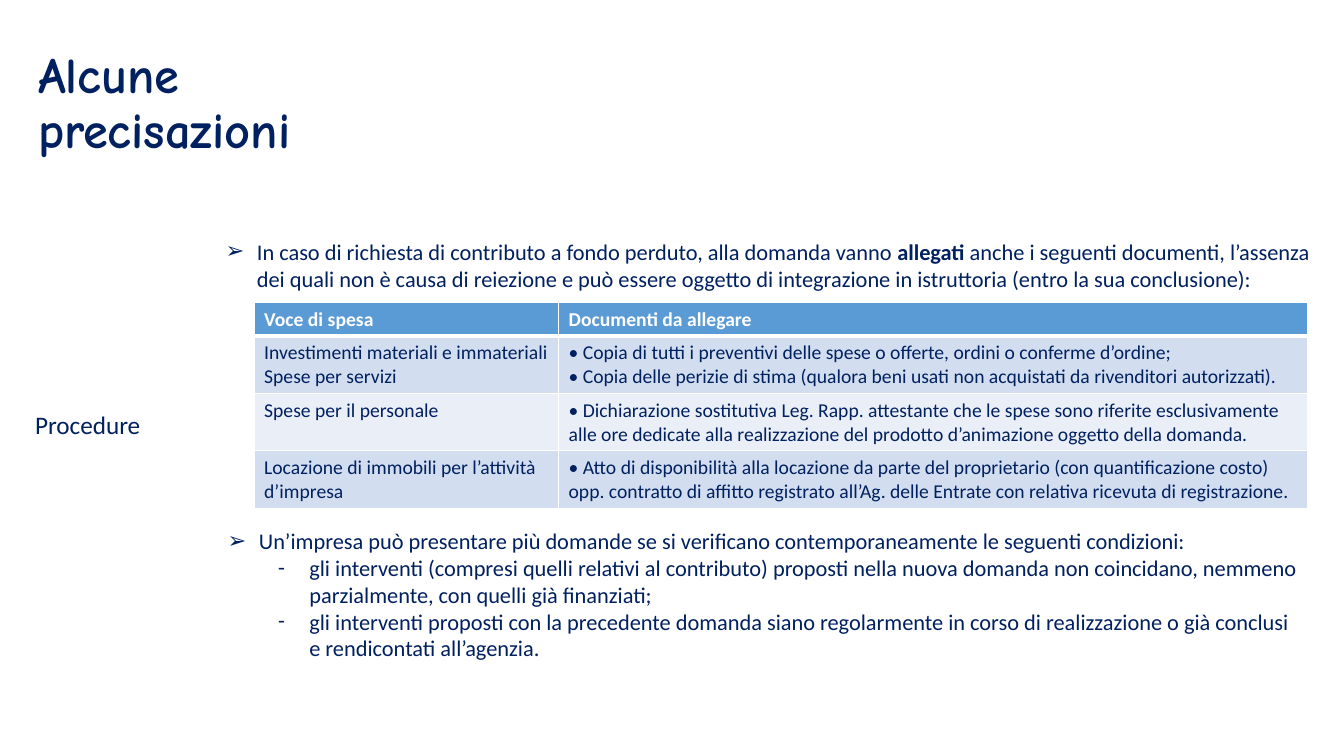
from dataclasses import dataclass

from lxml.etree import SubElement
from pptx import Presentation
from pptx.dml.color import RGBColor
from pptx.enum.text import MSO_ANCHOR as Anchor, MSO_AUTO_SIZE as AutoSize, PP_ALIGN as Align
from pptx.oxml.ns import qn
from pptx.util import Inches, Pt

TITLE = "Alcune precisazioni"
SECTION = "Procedure"
ATTACHMENTS = [
    ("➢", 1, [
        ("In caso di richiesta di contributo a fondo perduto, alla domanda vanno ", False),
        ("allegati", True),
        (" anche i seguenti documenti, l’assenza dei quali non è causa di reiezione e può essere "
         "oggetto di integrazione in istruttoria (entro la sua conclusione):", False),
    ]),
]
CONDITIONS = [
    ("➢", 0, "Un’impresa può presentare più domande se si verificano contemporaneamente "
             "le seguenti condizioni:"),
    ("-", 1, "gli interventi (compresi quelli relativi al contributo) proposti nella nuova domanda "
             "non coincidano, nemmeno parzialmente, con quelli già finanziati;"),
    ("-", 1, "gli interventi proposti con la precedente domanda siano regolarmente in corso di "
             "realizzazione o già conclusi e rendicontati all’agenzia."),
]
EXPENSES = [
    (["Voce di spesa"], ["Documenti da allegare"]),
    (["Investimenti materiali e immateriali", "Spese per servizi"],
     ["• Copia di tutti i preventivi delle spese o offerte, ordini o conferme d’ordine;",
      "• Copia delle perizie di stima (qualora beni usati non acquistati da rivenditori autorizzati)."]),
    (["Spese per il personale"],
     ["• Dichiarazione sostitutiva Leg. Rapp. attestante che le spese sono riferite esclusivamente "
      "alle ore dedicate alla realizzazione del prodotto d’animazione oggetto della domanda."]),
    (["Locazione di immobili per l’attività d’impresa"],
     ["• Atto di disponibilità alla locazione da parte del proprietario (con quantificazione costo) "
      "opp. contratto di affitto registrato all’Ag. delle Entrate con relativa ricevuta di registrazione."]),
]

SLIDE_SIZE = (13.33, 7.5)
TITLE_BOX = (0.28, 0.17, 4.06, 1.74)
SECTION_BOX = (0, 4.01, 1.74, 0.4)
ATTACHMENTS_BOX = (1.64, 2.31, 11.47, 0.91)
CONDITIONS_BOX = (2.16, 5.18, 10.82, 1.45)
TABLE_ORIGIN = (2.52, 3)
COLUMN_WIDTHS = (3.02, 7.43)
HEADER_HEIGHT, ROW_HEIGHT = 0.33, 0.57
BULLET_HANG, LEVEL_INDENT = 0.31, 0.5


@dataclass(frozen=True)
class Theme:
    navy: str = "002060"
    white: str = "FFFFFF"
    header: str = "5B9BD5"
    bands: tuple = ("D2DEEF", "EAEFF7")
    title_font: str = "Comic Neue"
    body_font: str = "Calibri"
    title_size: int = 36
    section_size: int = 18
    body_size: int = 16
    table_size: int = 14
    thin: int = 1
    thick: int = 3


THEME = Theme()


def write(paragraph, text, *, size, font=THEME.body_font, color=THEME.navy,
          bold=False, align=None, bullet=None, level=0, spacing=None):
    if bullet:
        paragraph.level = level
        properties = paragraph._p.get_or_add_pPr()
        properties.set("marL", str(Inches(BULLET_HANG + level * LEVEL_INDENT)))
        properties.set("indent", str(-Inches(BULLET_HANG)))
        SubElement(properties, qn("a:buFont"), typeface=THEME.body_font)
        SubElement(properties, qn("a:buChar"), char=bullet)
    if align is not None:
        paragraph.alignment = align
    if spacing:
        paragraph.line_spacing = spacing
    for words, strong in ([(text, bold)] if isinstance(text, str) else text):
        run = paragraph.add_run()
        run.text = words
        run.font.name, run.font.size, run.font.bold = font, Pt(size), strong
        run.font.color.rgb = RGBColor.from_string(color)


def paragraphs_for(frame, items):
    for index, item in enumerate(items):
        yield (frame.add_paragraph() if index else frame.paragraphs[0]), item


def add_frame(slide, box, anchor=Anchor.TOP, auto_size=AutoSize.SHAPE_TO_FIT_TEXT):
    frame = slide.shapes.add_textbox(*map(Inches, box)).text_frame
    frame.word_wrap = True
    frame.auto_size = auto_size
    frame.vertical_anchor = anchor
    return frame


def add_list(slide, box, items):
    for paragraph, (bullet, level, text) in paragraphs_for(add_frame(slide, box), items):
        write(paragraph, text, size=THEME.body_size, bullet=bullet, level=level)


def border_cell(cell, top, bottom):
    properties = cell._tc.get_or_add_tcPr()
    for side, width in (("L", THEME.thin), ("R", THEME.thin), ("T", top), ("B", bottom)):
        line = SubElement(properties, qn(f"a:ln{side}"), w=str(Pt(width)))
        fill = SubElement(line, qn("a:solidFill"))
        SubElement(fill, qn("a:srgbClr"), val=THEME.white)


def add_expense_table(slide):
    heights = [HEADER_HEIGHT] + [ROW_HEIGHT] * (len(EXPENSES) - 1)
    size = (sum(COLUMN_WIDTHS), sum(heights))
    table = slide.shapes.add_table(len(heights), len(COLUMN_WIDTHS),
                                   *map(Inches, TABLE_ORIGIN + size)).table
    for column, width in zip(table.columns, COLUMN_WIDTHS):
        column.width = Inches(width)
    for row_index, (row, height, contents) in enumerate(zip(table.rows, heights, EXPENSES)):
        row.height = Inches(height)
        is_header = row_index == 0
        fill = THEME.header if is_header else THEME.bands[(row_index - 1) % 2]
        for cell, lines in zip(row.cells, contents):
            border_cell(cell, top=THEME.thick if row_index == 1 else THEME.thin,
                        bottom=THEME.thick if is_header else THEME.thin)
            cell.fill.solid()
            cell.fill.fore_color.rgb = RGBColor.from_string(fill)
            for paragraph, line in paragraphs_for(cell.text_frame, lines):
                write(paragraph, line, size=THEME.table_size, bold=is_header,
                      color=THEME.white if is_header else THEME.navy)


def main():
    presentation = Presentation()
    presentation.slide_width, presentation.slide_height = map(Inches, SLIDE_SIZE)
    slide = presentation.slides.add_slide(presentation.slide_layouts[6])

    title = add_frame(slide, TITLE_BOX, anchor=Anchor.MIDDLE, auto_size=AutoSize.NONE)
    write(title.paragraphs[0], TITLE, size=THEME.title_size, font=THEME.title_font,
          bold=True, spacing=0.9)
    add_list(slide, ATTACHMENTS_BOX, ATTACHMENTS)
    section = add_frame(slide, SECTION_BOX)
    write(section.paragraphs[0], SECTION, size=THEME.section_size, align=Align.CENTER)
    add_expense_table(slide)
    add_list(slide, CONDITIONS_BOX, CONDITIONS)

    presentation.save("out.pptx")


if __name__ == "__main__":
    main()
